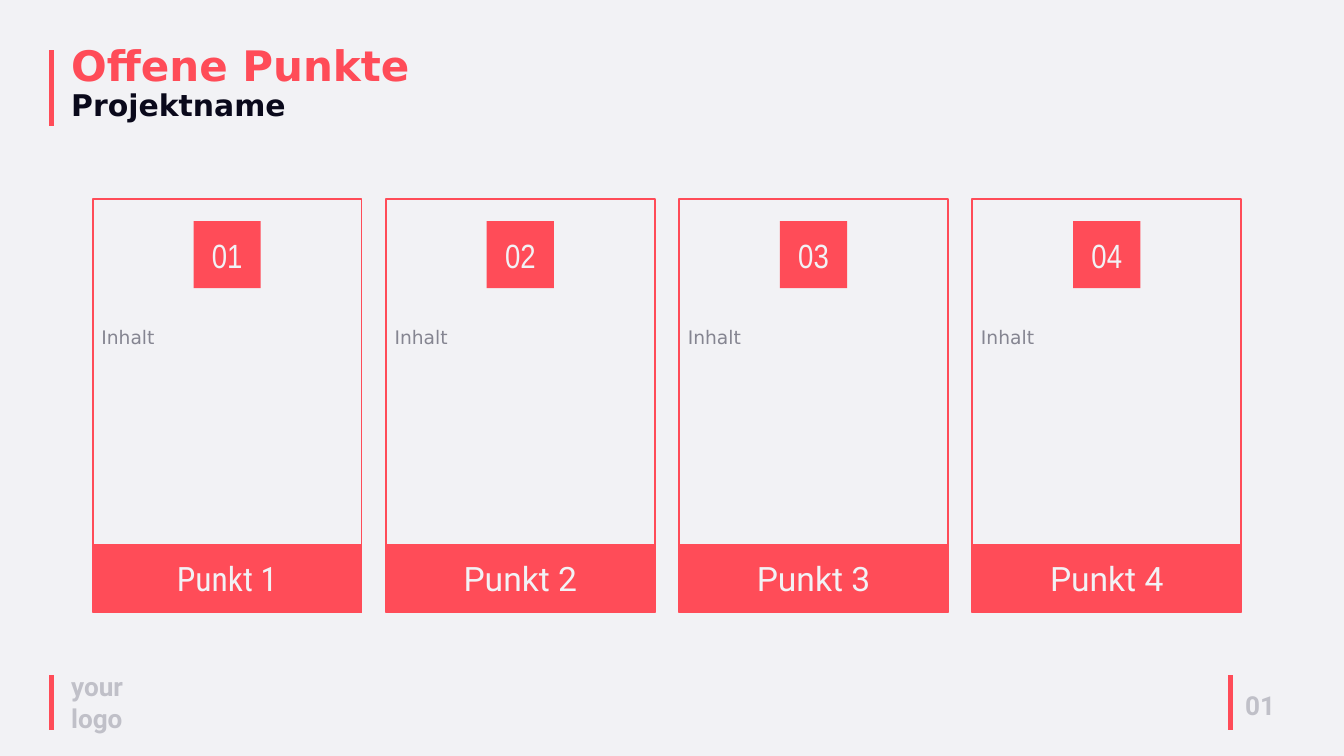
from lxml.etree import SubElement
from pptx import Presentation
from pptx.dml.color import RGBColor
from pptx.enum.shapes import MSO_CONNECTOR, MSO_SHAPE
from pptx.enum.text import MSO_ANCHOR, MSO_AUTO_SIZE, PP_ALIGN
from pptx.oxml.ns import qn
from pptx.util import Inches, Pt

COLORS = {
    "background": "F2F2F5",
    "accent": "FF4C58",
    "dark": "0A091B",
    "body": "858591",
    "footer": "C0C0C8",
}
POINTS = [
    ("01", "Punkt 1", "Roboto Condensed"),
    ("02", "Punkt 2", "Roboto"),
    ("03", "Punkt 3", "Roboto"),
    ("04", "Punkt 4", "Roboto"),
]


def color(name):
    return RGBColor.from_string(COLORS[name])


def format_run(run, size, font, color_name, bold=False):
    run.font.size = Pt(size)
    run.font.name = font
    run.font.bold = bold
    run.font.color.rgb = color(color_name)


def add_label(shapes, box, text, *style):
    label = shapes.add_textbox(*map(Inches, box))
    frame = label.text_frame
    frame.word_wrap = True
    frame.auto_size = MSO_AUTO_SIZE.SHAPE_TO_FIT_TEXT
    frame.text = text
    format_run(frame.paragraphs[0].runs[0], *style)


def add_block(shapes, kind, box, fill=None, line_width=None, text="", font=None):
    block = shapes.add_shape(kind, *map(Inches, box))
    block.shadow.inherit = False
    if fill:
        block.fill.solid()
        block.fill.fore_color.rgb = color(fill)
    else:
        block.fill.background()
    if line_width:
        block.line.color.rgb = color("accent")
        block.line.width = Pt(line_width)
    else:
        block.line.fill.background()
    if text:
        frame = block.text_frame
        frame.text = text
        frame.vertical_anchor = MSO_ANCHOR.MIDDLE
        frame.paragraphs[0].alignment = PP_ALIGN.CENTER
        format_run(frame.paragraphs[0].runs[0], 36, font, "background")


def add_bar(slide, x, top, bottom):
    bar = slide.shapes.add_connector(
        MSO_CONNECTOR.STRAIGHT, Inches(x), Inches(top), Inches(x), Inches(bottom))
    bar.line.color.rgb = color("accent")
    bar.line.width = Pt(5)
    SubElement(bar._element.spPr, qn("a:effectLst"))


def add_header(slide, left, top, width, height):
    add_bar(slide, left, top + 0.13, top + 1.26)
    title = slide.shapes.title
    title.left, title.top = Inches(left + 0.19), Inches(top)
    title.width, title.height = Inches(width - 0.19), Inches(height)
    frame = title.text_frame
    frame.text = "Offene Punkte\vProjektname"
    frame.word_wrap = True
    frame.auto_size = MSO_AUTO_SIZE.SHAPE_TO_FIT_TEXT
    frame.vertical_anchor = MSO_ANCHOR.TOP
    heading = frame.paragraphs[0]
    heading.alignment = PP_ALIGN.LEFT
    heading.line_spacing = 0.9
    topic, project = heading.runs
    format_run(topic, 45, "DejaVu Sans", "accent", True)
    format_run(project, 32, "DejaVu Sans", "dark", True)


def add_card(slide, left, top, width, height, number, caption, caption_font):
    shapes = slide.shapes.add_group_shape().shapes
    # Frame and content
    add_block(shapes, MSO_SHAPE.RECTANGLE, (left, top, width, height), line_width=2)
    add_label(shapes, (left + 0.03, top + 1.84, width - 0.07, 0.44),
              "Inhalt", 20, "DejaVu Sans", "body")
    # Number badge and caption band
    add_block(shapes, MSO_SHAPE.RECTANGLE,
              (left + (width - 1) / 2, top + 0.33, 1, 1),
              "accent", text=number, font="Arial Narrow")
    add_block(shapes, MSO_SHAPE.FLOWCHART_PROCESS,
              (left, top + height - 1, width, 1),
              "accent", 2, caption, caption_font)


def add_cards(slide, left, top, width, height):
    card_width = 4
    pitch = (width - card_width) / (len(POINTS) - 1)
    for index, point in enumerate(POINTS):
        add_card(slide, left + index * pitch, top, card_width, height, *point)


def add_footer(slide, left, top, right):
    for x in (left, right):
        add_bar(slide, x, top, top + 0.81)
    style = (28, "Roboto", "footer", True)
    add_label(slide.shapes, (left + 0.19, top - 0.12, 1.19, 1.04), "your logo", *style)
    add_label(slide.shapes, (right + 0.12, top + 0.16, 1.9, 0.57), "01", *style)


def main():
    deck = Presentation()
    deck.slide_width, deck.slide_height = Inches(20), Inches(11.25)
    slide = deck.slides.add_slide(deck.slide_layouts[5])  # title only
    slide.background.fill.solid()
    slide.background.fill.fore_color.rgb = color("background")
    add_header(slide, 0.77, 0.62, 6.15, 1.27)
    add_cards(slide, 1.38, 2.96, 17.09, 6.15)
    add_footer(slide, 0.77, 10.05, 18.31)
    deck.save("out.pptx")


if __name__ == "__main__":
    main()
